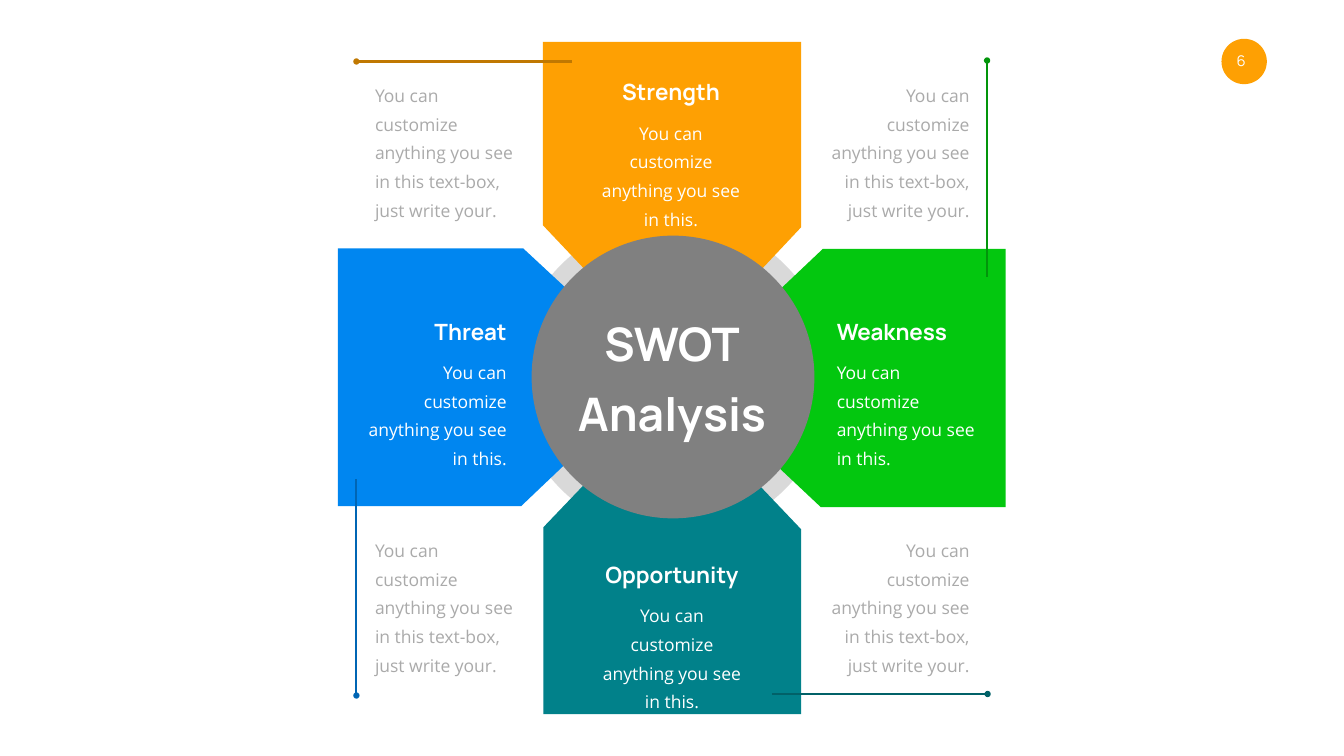
"""Build a SWOT analysis slide with four petals around a central title."""
from dataclasses import dataclass

import lxml.etree
import pptx
import pptx.dml.color
import pptx.enum.shapes
import pptx.enum.text
import pptx.oxml.ns
import pptx.util

Inches = pptx.util.Inches
Pt = pptx.util.Pt
Align = pptx.enum.text.PP_ALIGN
Anchor = pptx.enum.text.MSO_ANCHOR

COLORS = {
    "strength": "FEA003", "strength_pin": "C07801",
    "weakness": "03C70F", "weakness_pin": "02950B",
    "opportunity": "01818A", "opportunity_pin": "016168",
    "threat": "0086F0", "threat_pin": "0065B4",
    "ring": "D9D9D9", "hub": "808080", "white": "FFFFFF", "note": "AAAAAA",
}
HEADING_FONT = "Manrope"
BODY_FONT = "Open Sans"
PETAL_TEXT = "You can customize anything you see in this."
NOTE_TEXT = "You can customize anything you see in this text-box, just write your."
HUB_X, HUB_Y = 13.35, 7.48


@dataclass(frozen=True)
class Petal:
    name: str
    outline: tuple[tuple[float, float], ...]
    text_left: float
    text_top: float
    align: Align


@dataclass(frozen=True)
class Pin:
    petal: str
    start: tuple[float, float]
    dot: tuple[float, float]


@dataclass(frozen=True)
class Note:
    left: float
    top: float
    align: Align


PETALS = (
    Petal("Strength", ((10.77, 0.83), (10.77, 4.47), (12.55, 6.35), (14.16, 6.35),
                       (15.89, 4.51), (15.89, 0.83)), 11.76, 2.23, Align.CENTER),
    Petal("Weakness", ((16.32, 4.94), (14.44, 6.72), (14.44, 8.33), (16.28, 10.06),
                       (19.95, 10.06), (19.95, 4.94)), 16.5, 6.98, Align.LEFT),
    Petal("Opportunity", ((12.51, 8.65), (10.78, 10.46), (10.78, 14.17), (15.89, 14.17),
                          (15.89, 10.5), (14.13, 8.65)), 11.78, 11.81, Align.CENTER),
    Petal("Threat", ((6.7, 4.93), (6.7, 10.04), (10.34, 10.04), (12.22, 8.25),
                     (12.22, 6.64), (10.38, 4.93)), 7.05, 6.98, Align.RIGHT),
)
PINS = (
    Pin("opportunity", (15.31, 13.77), (19.59, 13.77)),
    Pin("strength", (11.35, 1.22), (7.07, 1.22)),
    Pin("weakness", (19.58, 5.49), (19.58, 1.2)),
    Pin("threat", (7.07, 9.51), (7.07, 13.8)),
)
NOTES = tuple(
    Note(left, top, align)
    for top in (1.78, 10.81)
    for left, align in ((7.34, Align.LEFT), (16.15, Align.RIGHT))
)


def rgb(name: str) -> pptx.dml.color.RGBColor:
    return pptx.dml.color.RGBColor.from_string(COLORS[name])


def paint(shape, color: str) -> None:
    shape.fill.solid()
    shape.fill.fore_color.rgb = rgb(color)
    shape.line.fill.background()
    shape.shadow.inherit = False


def add_disc(slide, x: float, y: float, diameter: float, color: str):
    disc = slide.shapes.add_shape(
        pptx.enum.shapes.MSO_SHAPE.OVAL,
        Inches(x - diameter / 2), Inches(y - diameter / 2),
        Inches(diameter), Inches(diameter))
    paint(disc, color)
    return disc


def add_petal(slide, petal: Petal) -> None:
    first, *rest = [(Inches(x), Inches(y)) for x, y in petal.outline]
    builder = slide.shapes.build_freeform(*first)
    builder.add_line_segments(rest)
    paint(builder.convert_to_shape(), petal.name.lower())


def add_pin(slide, pin: Pin) -> None:
    line = slide.shapes.add_connector(
        pptx.enum.shapes.MSO_CONNECTOR.STRAIGHT,
        *map(Inches, pin.start + pin.dot))
    line.line.color.rgb = rgb(f"{pin.petal}_pin")
    line.line.width = Pt(3)
    qn = pptx.oxml.ns.qn
    properties = line.element.spPr
    lxml.etree.SubElement(properties.find(qn("a:ln")), qn("a:tailEnd"), type="oval")
    lxml.etree.SubElement(properties, qn("a:effectLst"))


def style_text(shape, font: str, size: float, color: str, align: Align,
               anchor: Anchor, spacing: float | None = None, bold: bool = False) -> None:
    frame = shape.text_frame
    frame.word_wrap = True
    frame.auto_size = pptx.enum.text.MSO_AUTO_SIZE.SHAPE_TO_FIT_TEXT
    frame.vertical_anchor = anchor
    for paragraph in frame.paragraphs:
        paragraph.alignment = align
        if spacing:
            paragraph.line_spacing = Pt(spacing)
        paragraph.font.name = font
        paragraph.font.size = Pt(size)
        paragraph.font.bold = bold
        paragraph.font.color.rgb = rgb(color)


def add_text(slide, text: str, left: float, top: float, width: float, height: float):
    box = slide.shapes.add_textbox(*map(Inches, (left, top, width, height)))
    box.text_frame.text = text
    return box


def add_petal_text(slide, petal: Petal) -> None:
    heading = add_text(slide, petal.name, petal.text_left, petal.text_top - 0.73, 3.1, 0.64)
    style_text(heading, HEADING_FONT, 32, "white", petal.align, Anchor.BOTTOM, bold=True)
    body = add_text(slide, PETAL_TEXT, petal.text_left, petal.text_top, 3.1, 1.77)
    style_text(body, BODY_FONT, 25, "white", petal.align, Anchor.TOP, 41)


def add_note(slide, note: Note) -> None:
    box = add_text(slide, NOTE_TEXT, note.left, note.top, 3.18, 2.35)
    style_text(box, BODY_FONT, 25, "note", note.align, Anchor.MIDDLE, 41)


def add_page_number(slide) -> None:
    add_disc(slide, 24.68, 1.22, 0.9, "strength")
    number = add_text(slide, "6", 24.32, 0.9, 0.79, 0.61)
    style_text(number, HEADING_FONT, 21, "white", Align.CENTER, Anchor.MIDDLE)
    number.text_frame.margin_right = Inches(0.29)


def place_title(slide, hub) -> None:
    title = slide.shapes.title
    title.left, title.top, title.width, title.height = map(Inches, (11.35, 6.02, 3.96, 2.68))
    title.text_frame.text = "SWOT\nAnalysis"
    style_text(title, HEADING_FONT, 66, "white", Align.CENTER, Anchor.MIDDLE, 100, bold=True)
    title.text_frame.word_wrap = False
    hub.element.addnext(title.element)


def main() -> None:
    presentation = pptx.Presentation()
    presentation.slide_width = Inches(26.66)
    presentation.slide_height = Inches(15)
    slide = presentation.slides.add_slide(presentation.slide_layouts.get_by_name("Title Only"))

    add_page_number(slide)
    add_disc(slide, HUB_X, HUB_Y, 6.29, "ring")
    for petal in PETALS:
        add_petal(slide, petal)
    hub = add_disc(slide, HUB_X, HUB_Y, 5.61, "hub")
    place_title(slide, hub)
    for pin in PINS:
        add_pin(slide, pin)
    for petal in PETALS:
        add_petal_text(slide, petal)
    for note in NOTES:
        add_note(slide, note)

    presentation.save("out.pptx")


if __name__ == "__main__":
    main()
